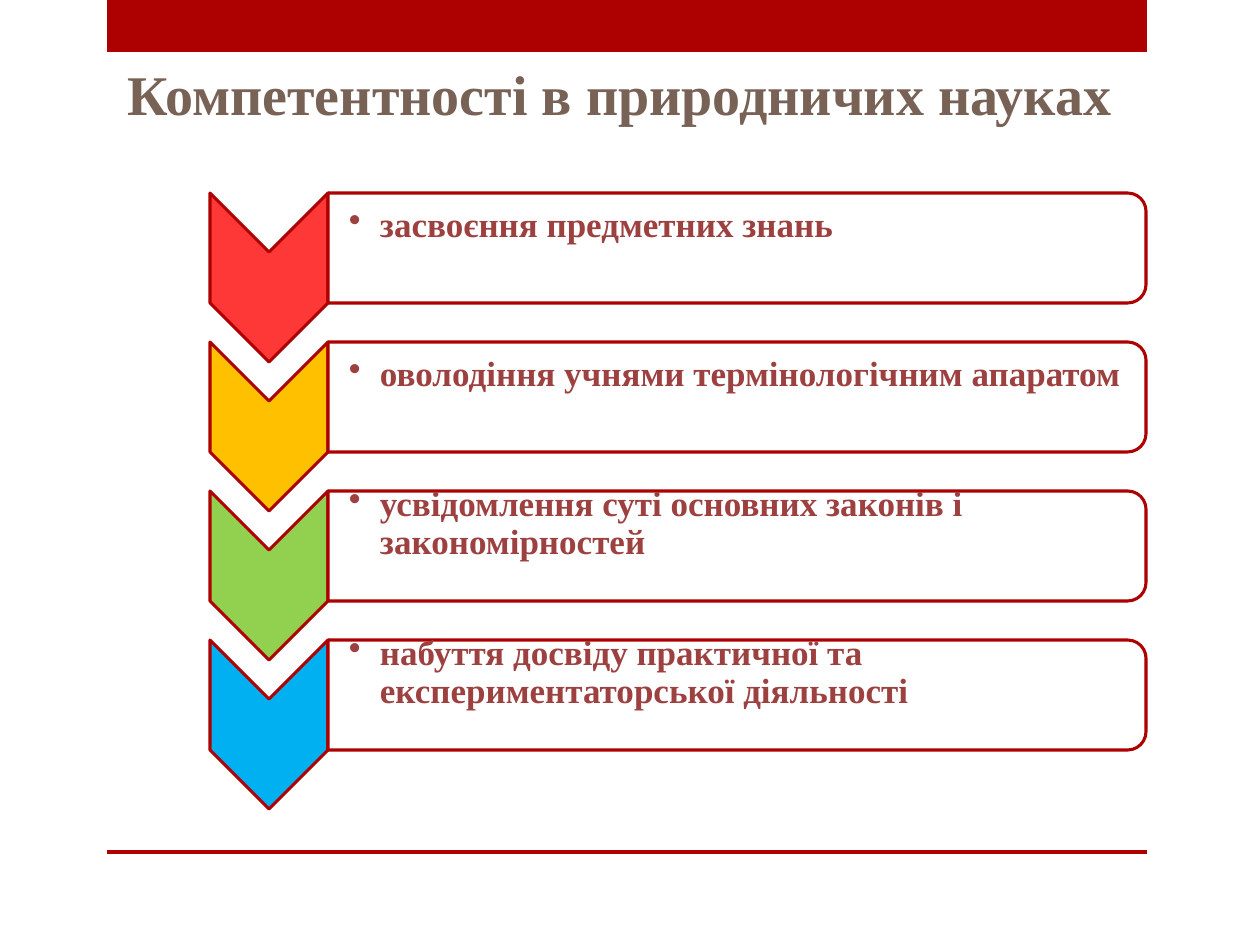
from lxml import etree
from pptx import Presentation
from pptx.dml.color import RGBColor
from pptx.enum.shapes import MSO_SHAPE
from pptx.enum.text import MSO_ANCHOR
from pptx.oxml.ns import qn
from pptx.util import Pt

RECTANGLE = MSO_SHAPE.RECTANGLE
CHEVRON = MSO_SHAPE.CHEVRON
CARD = MSO_SHAPE.ROUND_2_SAME_RECTANGLE
TOP = MSO_ANCHOR.TOP
MIDDLE = MSO_ANCHOR.MIDDLE

EMU_PER_INCH = 914400
PX_PER_INCH = 126
FONT = "Times New Roman"
RED = "AD0101"
WHITE = "FFFFFF"
TITLE_COLOR = "786155"
ITEM_COLOR = "9D4140"

FIRST_ROW = 193
ROW_STEP = 149
ITEMS = [
    ("FE3737", "засвоєння предметних знань"),
    ("FFC000", "оволодіння учнями термінологічним апаратом"),
    ("92D050", "усвідомлення суті основних законів і закономірностей"),
    ("00B0F0", "набуття досвіду практичної та експериментаторської діяльності"),
]


def px(value):
    return round(value * EMU_PER_INCH / PX_PER_INCH)


def color(value):
    return RGBColor.from_string(value)


def add_block(page, kind, left, top, width, height, fill):
    shape = page.shapes.add_shape(kind, px(left), px(top), px(width), px(height))
    shape.shadow.inherit = False
    shape.fill.solid()
    shape.fill.fore_color.rgb = color(fill)
    shape.line.fill.background()
    return shape


def add_turned(page, kind, left, top, width, height, fill):
    offset = (width - height) / 2
    shape = add_block(page, kind, left + offset, top - offset, height, width, fill)
    shape.rotation = 90
    shape.line.color.rgb = color(RED)
    shape.line.width = Pt(1.75)


def add_text(page, left, top, width, height, text, size, fill, anchor):
    box = page.shapes.add_textbox(px(left), px(top), px(width), px(height))
    frame = box.text_frame
    frame.word_wrap = True
    frame.vertical_anchor = anchor
    frame.text = text
    para = frame.paragraphs[0]
    font = para.runs[0].font
    font.name = FONT
    font.size = Pt(size)
    font.bold = True
    font.color.rgb = color(fill)
    return frame


def add_bullet(para, indent):
    properties = para._p.get_or_add_pPr()
    properties.set("marL", str(px(indent)))
    properties.set("indent", str(-px(indent)))
    etree.SubElement(properties, qn("a:buChar")).set("char", "•")


def add_item(page, top, fill, text):
    add_turned(page, CHEVRON, 210, top, 118, 169, fill)
    add_turned(page, CARD, 328, top, 818, 110, WHITE)
    frame = add_text(page, 329, top - 15, 813, 96, text, 20, ITEM_COLOR, MIDDLE)
    frame.margin_left = px(20)
    frame.margin_top = frame.margin_right = frame.margin_bottom = px(1)
    para = frame.paragraphs[0]
    para.line_spacing = 0.9
    add_bullet(para, 31)


def main():
    deck = Presentation()
    deck.slide_width = px(1260)
    deck.slide_height = px(945)
    page = deck.slides.add_slide(deck.slide_layouts[6])
    add_block(page, RECTANGLE, 107, 0, 1040, 52, RED)
    add_block(page, RECTANGLE, 107, 850, 1040, 4, RED)
    add_text(page, 115, 53, 1062, 81, "Компетентності в природничих науках",
             32, TITLE_COLOR, TOP)
    for row, (fill, text) in enumerate(ITEMS):
        add_item(page, FIRST_ROW + row * ROW_STEP, fill, text)
    deck.save("out.pptx")


if __name__ == "__main__":
    main()
